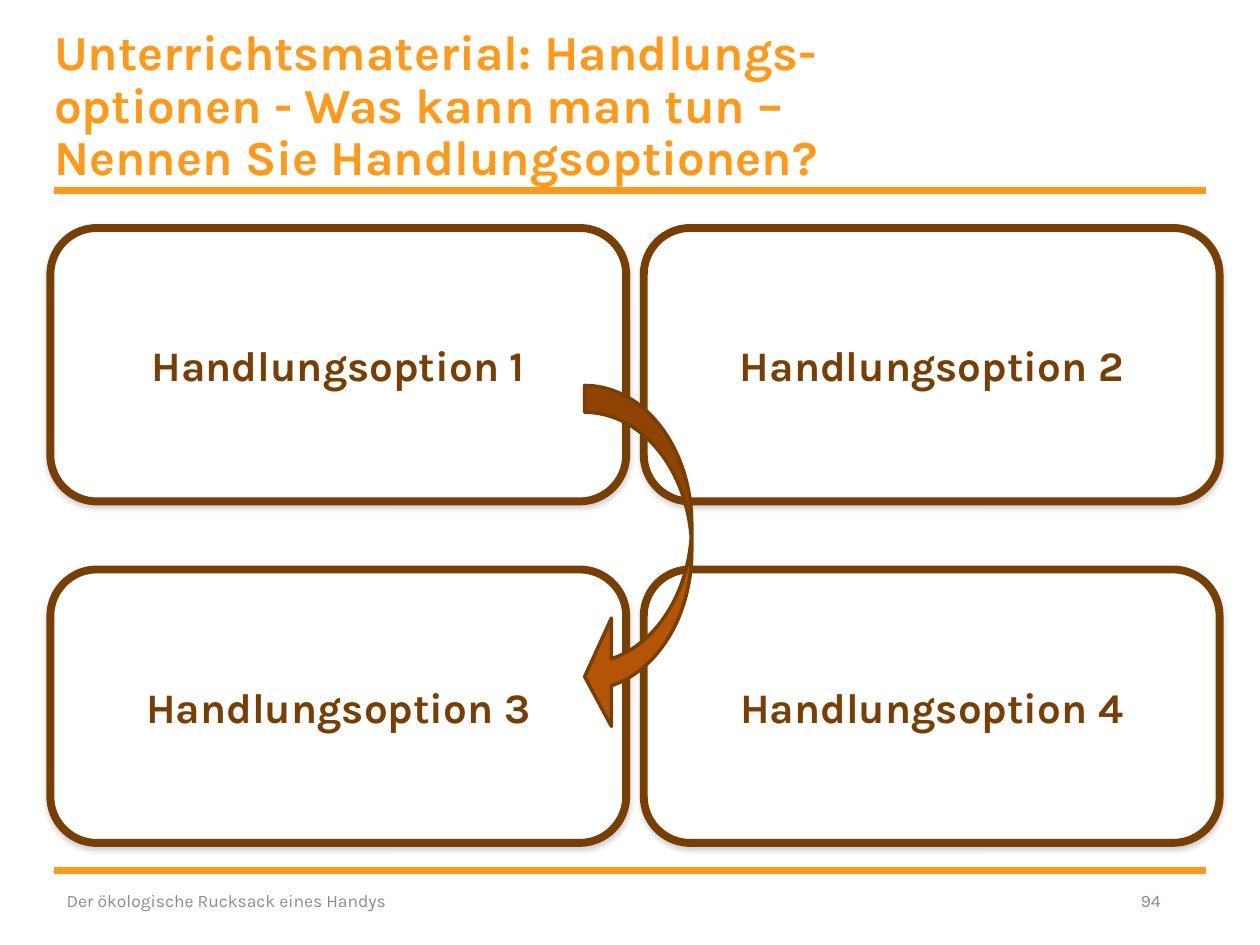
"""Build the slide with four boxes for options to act and a curved arrow."""
from dataclasses import dataclass

from lxml import etree
from pptx import Presentation
from pptx.dml.color import RGBColor
from pptx.enum.shapes import MSO_CONNECTOR, MSO_SHAPE
from pptx.enum.text import MSO_ANCHOR, MSO_AUTO_SIZE, PP_ALIGN
from pptx.oxml import parse_xml
from pptx.oxml.ns import qn
from pptx.shapes.base import BaseShape
from pptx.slide import Slide
from pptx.text.text import TextFrame
from pptx.util import Pt

STRAIGHT = MSO_CONNECTOR.STRAIGHT
ROUNDED = MSO_SHAPE.ROUNDED_RECTANGLE
CURVED_ARROW = MSO_SHAPE.CURVED_LEFT_ARROW
TOP, MIDDLE = MSO_ANCHOR.TOP, MSO_ANCHOR.MIDDLE
LEFT, CENTER, RIGHT = PP_ALIGN.LEFT, PP_ALIGN.CENTER, PP_ALIGN.RIGHT
NO_AUTOFIT = MSO_AUTO_SIZE.NONE

FONT = "Karla"
COLORS = {
    "orange": "FF9919",
    "brown": "783F04",
    "rust": "B45506",
    "white": "FFFFFF",
    "gray": "8C8C8C",
}
SHADOW = (
    '<a:outerShdw xmlns:a="http://schemas.openxmlformats.org/drawingml/2006/main" '
    'blurRad="39370" dist="22860" dir="5400000" rotWithShape="0">'
    '<a:srgbClr val="808080"><a:alpha val="35000"/></a:srgbClr></a:outerShdw>'
)


@dataclass(frozen=True)
class Box:
    """Position and size in points."""

    left: float
    top: float
    width: float
    height: float

    def lengths(self) -> tuple:
        """Return the four values as lengths."""
        return Pt(self.left), Pt(self.top), Pt(self.width), Pt(self.height)


@dataclass(frozen=True)
class TextStyle:
    """Look of one line of text."""

    size: float
    color: str
    bold: bool
    alignment: PP_ALIGN
    anchor: MSO_ANCHOR = MIDDLE


TITLE_STYLE = TextStyle(28, "orange", True, LEFT, TOP)
OPTION_STYLE = TextStyle(24, "brown", True, CENTER)
FOOTER_STYLE = TextStyle(10, "gray", False, LEFT)
NUMBER_STYLE = TextStyle(10, "gray", False, RIGHT)

TITLE_BOX = Box(31, 15.84, 501.84, 84.24)
FIRST_OPTION = Box(28.8, 130.32, 329.04, 156.24)
COLUMN_STEP, ROW_STEP = 339.12, 195.12
ARROW_BOX = Box(334.08, 220.32, 61.2, 197.28)
RULE_LEFT, RULE_RIGHT = 31, 689
RULE_TOPS = (108.72, 497.52)


def rgb(name: str) -> RGBColor:
    """Look up a named color."""
    return RGBColor.from_string(COLORS[name])


def write_text(frame: TextFrame, text: str, style: TextStyle) -> None:
    """Fill a text frame with one styled paragraph."""
    frame.text = text
    frame.word_wrap = True
    frame.auto_size = NO_AUTOFIT
    frame.vertical_anchor = style.anchor
    paragraph = frame.paragraphs[0]
    paragraph.alignment = style.alignment
    font = paragraph.runs[0].font
    formats = {"name": FONT, "size": Pt(style.size), "bold": style.bold}
    for attribute, value in formats.items():
        setattr(font, attribute, value)
    font.color.rgb = rgb(style.color)


def add_title(slide: Slide, text: str) -> None:
    """Place and format the title placeholder."""
    title = slide.shapes.title
    for attribute, value in zip(("left", "top", "width", "height"), TITLE_BOX.lengths()):
        setattr(title, attribute, value)
    frame = title.text_frame
    for side in ("left", "top", "right", "bottom"):
        setattr(frame, f"margin_{side}", 0)
    write_text(frame, text, TITLE_STYLE)
    paragraph = frame.paragraphs[0]
    for attribute, value in {"line_spacing": 0.9, "space_before": Pt(0)}.items():
        setattr(paragraph, attribute, value)


def add_rule(slide: Slide, top: float) -> None:
    """Draw a horizontal rule across the slide."""
    rule = slide.shapes.add_connector(
        STRAIGHT, Pt(RULE_LEFT), Pt(top), Pt(RULE_RIGHT), Pt(top)
    )
    rule.line.color.rgb = rgb("orange")
    rule.line.width = Pt(4)
    etree.SubElement(rule._element.spPr, qn("a:effectLst"))


def add_outlined_shape(
    slide: Slide, kind: MSO_SHAPE, box: Box, fill: str, width: float, adjustments: tuple
) -> BaseShape:
    """Add a filled shape with a brown outline."""
    shape = slide.shapes.add_shape(kind, *box.lengths())
    for index, value in enumerate(adjustments):
        shape.adjustments[index] = value
    shape.fill.solid()
    shape.fill.fore_color.rgb = rgb(fill)
    shape.line.color.rgb = rgb("brown")
    shape.line.width = Pt(width)
    shape.shadow.inherit = False
    return shape


def add_option(slide: Slide, index: int) -> None:
    """Add one option box at its place in the two by two grid."""
    row, column = divmod(index, 2)
    box = Box(
        FIRST_OPTION.left + column * COLUMN_STEP,
        FIRST_OPTION.top + row * ROW_STEP,
        FIRST_OPTION.width,
        FIRST_OPTION.height,
    )
    shape = add_outlined_shape(slide, ROUNDED, box, "white", 4.5, (0.17,))
    shape._element.spPr.find(qn("a:effectLst")).append(parse_xml(SHADOW))
    write_text(shape.text_frame, f"Handlungsoption {index + 1}", OPTION_STYLE)


def add_label(slide: Slide, box: Box, text: str, style: TextStyle) -> None:
    """Add a text box."""
    write_text(slide.shapes.add_textbox(*box.lengths()).text_frame, text, style)


def main() -> None:
    """Build and save the presentation."""
    presentation = Presentation()
    presentation.slide_width, presentation.slide_height = Pt(720), Pt(540)
    slide = presentation.slides.add_slide(presentation.slide_layouts[5])
    for top in RULE_TOPS:
        add_rule(slide, top)
    for index in range(4):
        add_option(slide, index)
    add_outlined_shape(slide, CURVED_ARROW, ARROW_BOX, "rust", 2, (0.25, 1.01, 0.25))
    add_title(
        slide,
        "Unterrichtsmaterial: Handlungs-optionen - Was kann man tun – "
        "Nennen Sie Handlungsoptionen?",
    )
    add_label(
        slide,
        Box(31, 500.4, 243.36, 28.8),
        "Der ökologische Rucksack eines Handys",
        FOOTER_STYLE,
    )
    add_label(slide, Box(541.44, 500.4, 128.88, 28.8), "94", NUMBER_STYLE)
    presentation.save("out.pptx")


if __name__ == "__main__":
    main()
